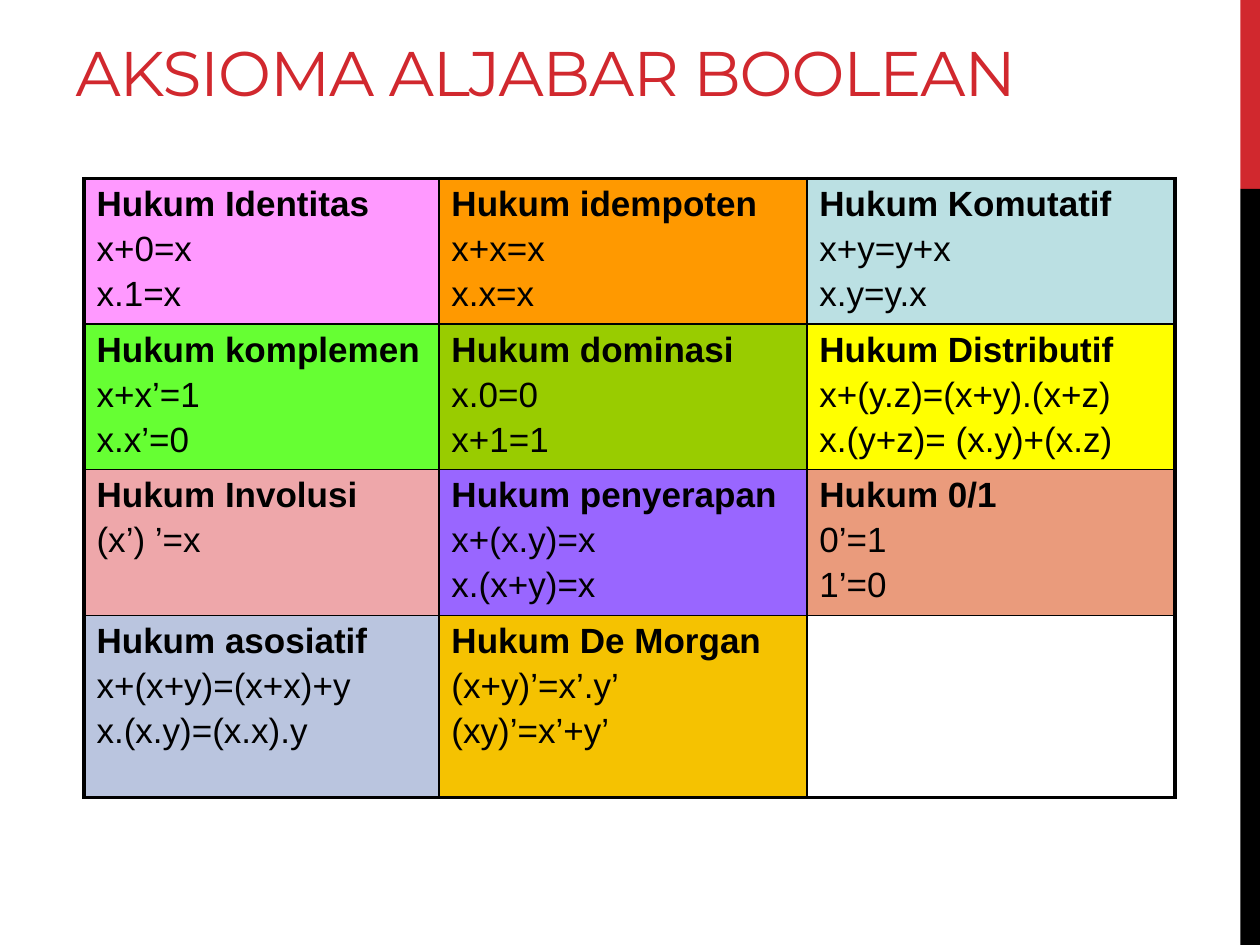
import pptx
import pptx.util
import pptx.dml.color
import pptx.enum.shapes
import pptx.enum.text
from lxml import etree

Pt = pptx.util.Pt
NS = "{http://schemas.openxmlformats.org/drawingml/2006/main}"

HUES = {
    "red": "D1282E", "black": "000000", "pink": "FF99FF", "orange": "FF9900",
    "aqua": "BBE0E3", "lime": "66FF33", "olive": "99CC00", "yellow": "FFFF00",
    "rose": "EEA7AA", "violet": "9966FF", "salmon": "EA9B7C",
    "steel": "BAC5DF", "gold": "F5C201",
}

# Each law: fill, heading, formulas
LAWS = [
    [("pink", "Hukum Identitas", "x+0=x", "x.1=x"),
     ("orange", "Hukum idempoten", "x+x=x", "x.x=x"),
     ("aqua", "Hukum Komutatif", "x+y=y+x", "x.y=y.x")],
    [("lime", "Hukum komplemen", "x+x’=1", "x.x’=0"),
     ("olive", "Hukum dominasi", "x.0=0", "x+1=1"),
     ("yellow", "Hukum Distributif", "x+(y.z)=(x+y).(x+z)", "x.(y+z)= (x.y)+(x.z)")],
    [("rose", "Hukum Involusi", "(x’) ’=x"),
     ("violet", "Hukum penyerapan", "x+(x.y)=x", "x.(x+y)=x"),
     ("salmon", "Hukum 0/1", "0’=1", "1’=0")],
    [("steel", "Hukum asosiatif", "x+(x+y)=(x+x)+y", "x.(x.y)=(x.x).y"),
     ("gold", "Hukum De Morgan", "(x+y)’=x’.y’", "(xy)’=x’+y’"),
     None],
]
COLS = [202.8, 210.3, 210.3]
ROWS = [83.2, 83.2, 83.2, 104.2]


def hue(name):
    return pptx.dml.color.RGBColor.from_string(HUES[name])


def style(font, face, size, name, bold=False):
    font.name, font.size, font.bold = face, Pt(size), bold
    font.color.rgb = hue(name)


def add_bars(slide, left, top, width, height):
    """Side strip: red upper fifth, black below."""
    cut = height / 5
    for name, y, h in (("red", top, cut), ("black", top + cut, height - cut)):
        bar = slide.shapes.add_shape(
            pptx.enum.shapes.MSO_SHAPE.RECTANGLE, Pt(left), Pt(y), Pt(width), Pt(h))
        bar.shadow.inherit = False
        bar.fill.solid()
        bar.fill.fore_color.rgb = hue(name)
        bar.line.fill.background()


def add_title(slide, left, top, width, height):
    title = slide.shapes.title
    title.left, title.top, title.width, title.height = map(Pt, (left, top, width, height))
    frame = title.text_frame
    frame.text = "AKSIOMA ALJABAR BOOLEAN"
    frame.word_wrap = True
    frame.auto_size = pptx.enum.text.MSO_AUTO_SIZE.NONE
    frame.vertical_anchor = pptx.enum.text.MSO_ANCHOR.BOTTOM
    para = frame.paragraphs[0]
    para.alignment = pptx.enum.text.PP_ALIGN.LEFT
    run = para.runs[0]
    style(run.font, "Montserrat", 36, "red")
    run._r.get_or_add_rPr().set("spc", "-60")


def set_edges(cell, outer):
    """Draw cell borders, thick on the sides listed in outer."""
    props = cell._tc.get_or_add_tcPr()
    for side in "LRTB":
        width = Pt(2.25 if side in outer else 1)
        line = etree.SubElement(props, NS + "ln" + side, w=str(width))
        fill = etree.SubElement(line, NS + "solidFill")
        etree.SubElement(fill, NS + "srgbClr", val=HUES["black"])


def fill_cell(cell, law):
    if law is None:
        cell.fill.background()
        return
    name, *lines = law
    cell.fill.solid()
    cell.fill.fore_color.rgb = hue(name)
    cell.text_frame.text = "\n".join(lines)
    for i, para in enumerate(cell.text_frame.paragraphs):
        para.space_before = Pt(3.4 if i else 0)
        style(para.runs[0].font, "Arial", 20, "black", bold=i == 0)


def add_laws(slide, left, top):
    frame = slide.shapes.add_table(
        len(ROWS), len(COLS), Pt(left), Pt(top), Pt(sum(COLS)), Pt(sum(ROWS)))
    table = frame.table
    table.first_row = table.horz_banding = False
    for col, width in zip(table.columns, COLS):
        col.width = Pt(width)
    for row, height in zip(table.rows, ROWS):
        row.height = Pt(height)
    for r, laws in enumerate(LAWS):
        for c, law in enumerate(laws):
            cell = table.cell(r, c)
            ends = {"L": c == 0, "R": c == len(COLS) - 1,
                    "T": r == 0, "B": r == len(ROWS) - 1}
            set_edges(cell, [side for side in ends if ends[side]])
            fill_cell(cell, law)


def main():
    deck = pptx.Presentation()
    deck.slide_width, deck.slide_height = Pt(720), Pt(540)
    slide = deck.slides.add_slide(deck.slide_layouts[5])
    add_bars(slide, 708.75, 0, 11.25, 540)
    add_title(slide, 36, 12, 618, 54)
    add_laws(slide, 48, 102)
    deck.save("out.pptx")


if __name__ == "__main__":
    main()
